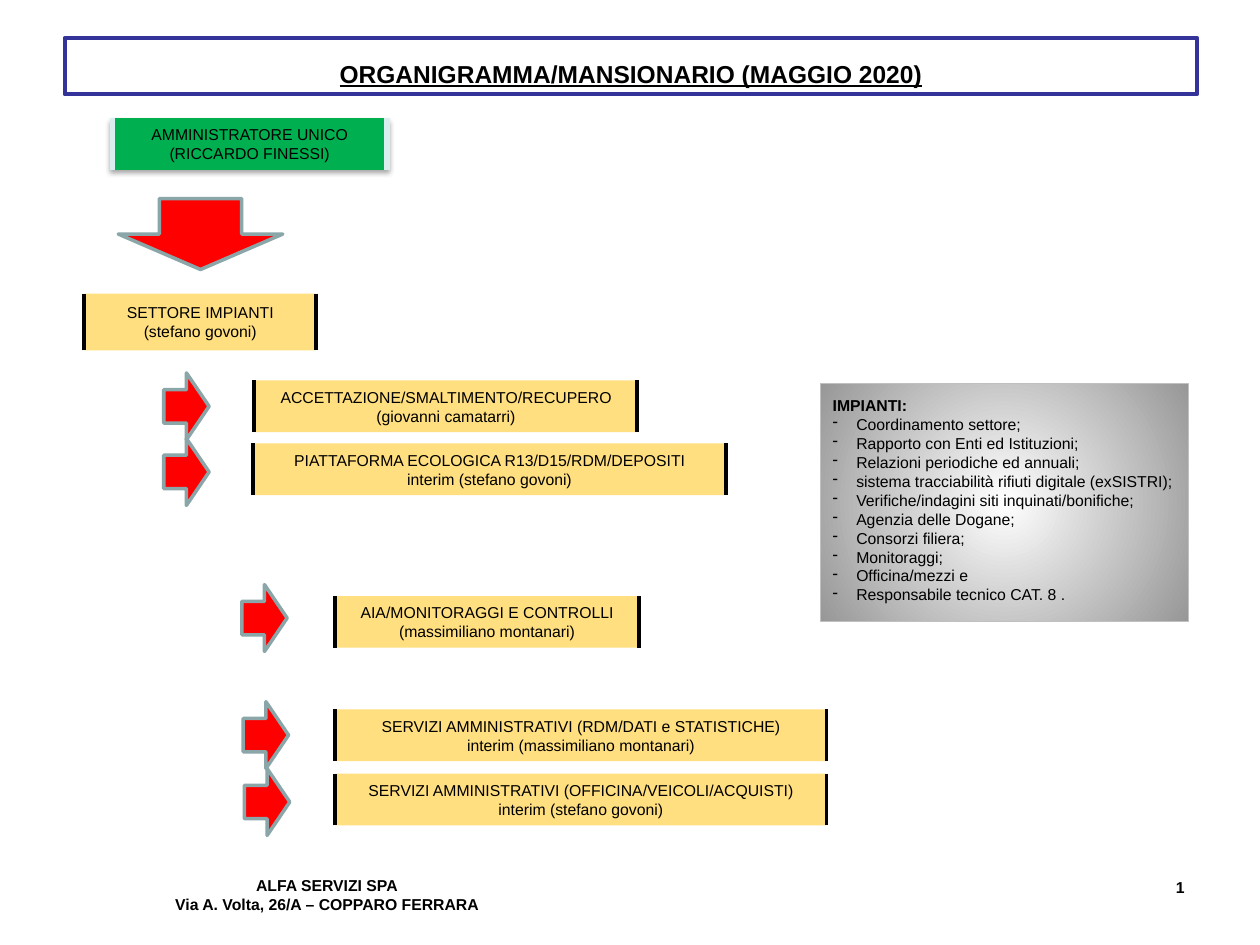
from lxml import etree
from pptx import Presentation
from pptx.dml.color import RGBColor
from pptx.enum.shapes import MSO_SHAPE
from pptx.enum.text import MSO_ANCHOR, PP_ALIGN
from pptx.oxml.ns import qn
from pptx.util import Pt

BRACKETS = MSO_SHAPE.DOUBLE_BRACKET
RECTANGLE = MSO_SHAPE.RECTANGLE
RIGHT_ARROW = MSO_SHAPE.RIGHT_ARROW
DOWN_ARROW = MSO_SHAPE.DOWN_ARROW
TOP, MIDDLE, BOTTOM = MSO_ANCHOR.TOP, MSO_ANCHOR.MIDDLE, MSO_ANCHOR.BOTTOM
LEFT, CENTER, RIGHT = PP_ALIGN.LEFT, PP_ALIGN.CENTER, PP_ALIGN.RIGHT

FONT = "Arial"
BLACK = "000000"
BOX_HEIGHT = 29.5
ARROW_SIZE = (25.9, 38.2)
INDENT = 13.5

# Text lines, box (left, top, width, height), arrow (left, top)
UNITS = [
    (["ACCETTAZIONE/SMALTIMENTO/RECUPERO", "(giovanni camatarri)"],
     (145.4, 217.4, 218.9, BOX_HEIGHT), (93.6, 213.1)),
    (["PIATTAFORMA ECOLOGICA R13/D15/RDM/DEPOSITI", "interim (stefano govoni)"],
     (144.7, 253.4, 270, BOX_HEIGHT), (93.6, 250.6)),
    (["AIA/MONITORAGGI E CONTROLLI", "(massimiliano montanari)"],
     (191.5, 340.6, 173.5, BOX_HEIGHT), (138.2, 334.1)),
    (["SERVIZI AMMINISTRATIVI (RDM/DATI e STATISTICHE)",
      "interim (massimiliano montanari)"],
     (191.5, 405.4, 280.8, BOX_HEIGHT), (139, 401)),
    (["SERVIZI AMMINISTRATIVI (OFFICINA/VEICOLI/ACQUISTI)",
      "interim (stefano govoni)"],
     (191.5, 442.1, 280.8, BOX_HEIGHT), (139.7, 439.2)),
]

DUTIES = [
    "Coordinamento settore;",
    "Rapporto con Enti ed Istituzioni;",
    "Relazioni periodiche ed annuali;",
    "sistema tracciabilità rifiuti digitale (exSISTRI);",
    "Verifiche/indagini siti inquinati/bonifiche;",
    "Agenzia delle Dogane;",
    "Consorzi filiera;",
    "Monitoraggi;",
    "Officina/mezzi e",
    "Responsabile tecnico CAT. 8 .",
]


def color(value):
    return RGBColor.from_string(value)


def add_child(parent, tag, **attributes):
    return etree.SubElement(parent, qn(tag), attributes)


def add_shape(slide, kind, box, line_color, line_width, fill_color=None):
    shape = slide.shapes.add_shape(kind, *map(Pt, box))
    shape.shadow.inherit = False
    shape.line.color.rgb = color(line_color)
    shape.line.width = Pt(line_width)
    if fill_color:
        shape.fill.solid()
        shape.fill.fore_color.rgb = color(fill_color)
    else:
        shape.fill.background()
    return shape


def write_lines(shape, lines, alignment=CENTER, anchor=TOP, margins=(7.2, 3.6),
                wrap=True, size=9, bold=False):
    """Fill the shape with one paragraph per line; margins are (sides, top and bottom)."""
    frame = shape.text_frame
    frame.word_wrap = wrap
    frame.vertical_anchor = anchor
    frame.margin_left = frame.margin_right = Pt(margins[0])
    frame.margin_top = frame.margin_bottom = Pt(margins[1])
    frame.text = "\n".join(lines)
    for paragraph in frame.paragraphs:
        paragraph.alignment = alignment
        paragraph.font.name = FONT
        paragraph.font.size = Pt(size)
        paragraph.font.bold = bold
        paragraph.font.color.rgb = color(BLACK)
    return frame.paragraphs


def add_title(slide, box, text):
    shape = add_shape(slide, RECTANGLE, box, "333399", 2.25)
    paragraph = write_lines(shape, [text], anchor=BOTTOM, size=14, bold=True)[0]
    paragraph.font.underline = True


def add_bracket_box(slide, box, lines, fill_color, line_color, line_width):
    shape = add_shape(slide, BRACKETS, box, line_color, line_width, fill_color)
    shape.adjustments[0] = 0
    write_lines(shape, lines, anchor=MIDDLE, margins=(2.9, 1.4), wrap=False)
    return shape


def add_director(slide, box, lines):
    shape = add_bracket_box(slide, box, lines, "00B050", "DAEDEF", 3)
    effects = shape.element.spPr.find(qn("a:effectLst"))
    shadow = add_child(effects, "a:outerShdw", blurRad=str(Pt(3.1)), dist=str(Pt(1.8)),
                       dir="5400000", rotWithShape="0")
    add_child(add_child(shadow, "a:srgbClr", val=BLACK), "a:alpha", val="35000")


def add_unit(slide, box, lines):
    shape = add_bracket_box(slide, box, lines, "FFC000", BLACK, 2.25)
    fill_element = shape.element.spPr.find(qn("a:solidFill"))
    add_child(fill_element[0], "a:alpha", val="50000")


def add_arrow(slide, kind, box):
    add_shape(slide, kind, box, "8AA6A8", 2, "FF0000")


def fill_radial(shape, inner, outer):
    shape.fill.gradient()
    for stop, value in zip(shape.fill.gradient_stops, (inner, outer)):
        stop.color.rgb = color(value)
    gradient = shape.element.spPr.find(qn("a:gradFill"))
    gradient.remove(gradient.find(qn("a:lin")))
    circle = add_child(gradient, "a:path", path="circle")
    add_child(circle, "a:fillToRect", l="50000", t="50000", r="50000", b="50000")


def add_dash(paragraph):
    properties = paragraph._p.get_or_add_pPr()
    properties.set("marL", str(Pt(INDENT)))
    properties.set("indent", str(-Pt(INDENT)))
    bullet = etree.Element(qn("a:buChar"), char="-")
    properties.insert(0, bullet)


def add_duties(slide, box, heading, duties):
    shape = add_shape(slide, RECTANGLE, box, "C0C0C0", 0.5)
    fill_radial(shape, "FFFFFF", "979797")
    paragraphs = write_lines(shape, [heading, *duties], LEFT, margins=(7.2, 7.2))
    paragraphs[0].font.bold = True
    for paragraph in paragraphs[1:]:
        add_dash(paragraph)


def add_footer(slide, box, lines, alignment):
    shape = slide.shapes.add_textbox(*map(Pt, box))
    write_lines(shape, lines, alignment, bold=True)


def main():
    presentation = Presentation()
    presentation.slide_width = Pt(720)
    presentation.slide_height = Pt(540)
    slide = presentation.slides.add_slide(presentation.slide_layouts[6])

    add_title(slide, (36.9, 21.7, 647.3, 32.2), "ORGANIGRAMMA/MANSIONARIO (MAGGIO 2020)")
    add_director(slide, (64.1, 67.5, 157, BOX_HEIGHT),
                 ["AMMINISTRATORE UNICO", "(RICCARDO FINESSI)"])
    add_arrow(slide, DOWN_ARROW, (67.6, 113.5, 94, 40.5))
    add_unit(slide, (48.2, 167.8, 132.5, 32.4), ["SETTORE IMPIANTI", "(stefano govoni)"])
    for lines, box, arrow_position in UNITS:
        add_unit(slide, box, lines)
        add_arrow(slide, RIGHT_ARROW, arrow_position + ARROW_SIZE)
    add_duties(slide, (468.7, 218.9, 210.3, 136.1), "IMPIANTI:", DUTIES)
    add_footer(slide, (72.7, 496.8, 228.2, 31),
               ["ALFA SERVIZI SPA", "Via A. Volta, 26/A – COPPARO FERRARA"], CENTER)
    add_footer(slide, (516.2, 498.2, 167.8, 31), ["1"], RIGHT)

    presentation.save("out.pptx")


if __name__ == "__main__":
    main()
